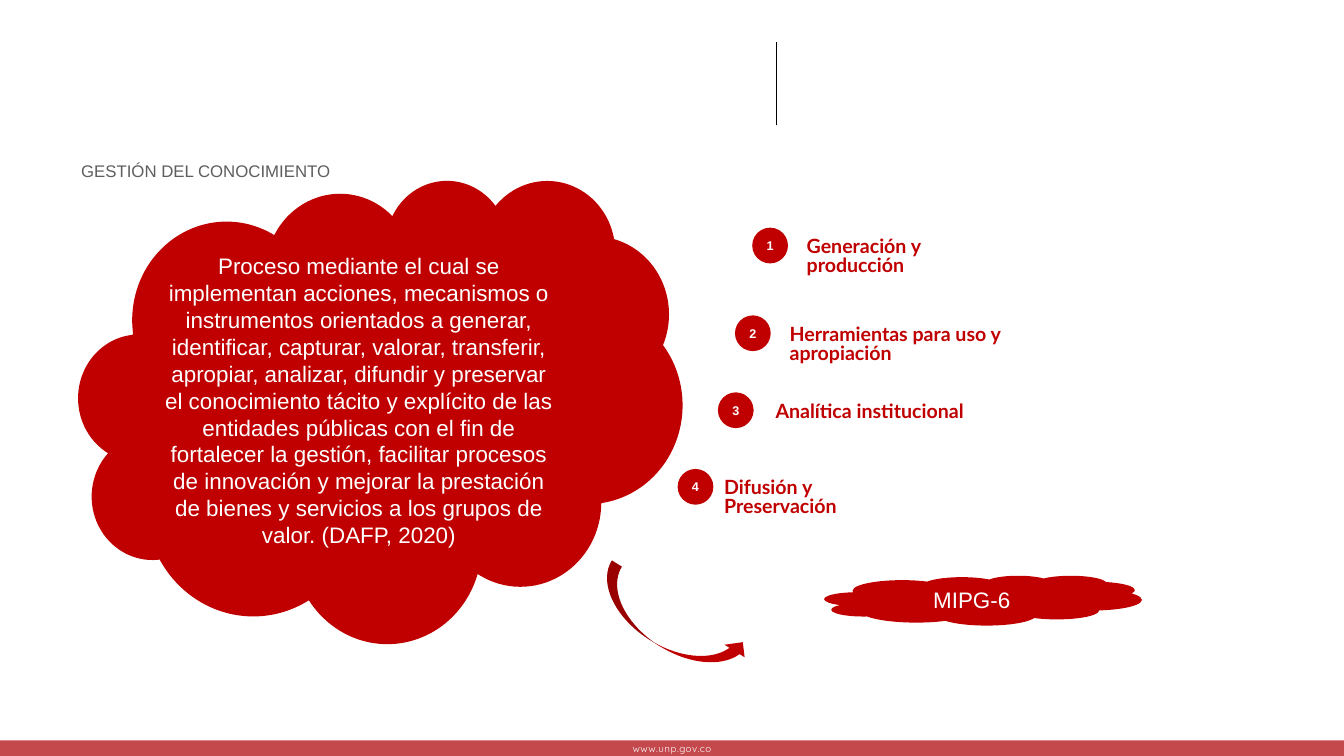
from pptx import Presentation
from pptx.dml.color import RGBColor
from pptx.enum.shapes import MSO_CONNECTOR, MSO_SHAPE
from pptx.enum.text import MSO_ANCHOR, PP_ALIGN
from pptx.oxml.ns import qn
from pptx.util import Cm, Pt
from lxml.etree import SubElement

COLORS = {
    "red": "C00000",
    "rose": "C4494D",
    "gray": "5E5E5E",
    "white": "FFFFFF",
    "black": "000000",
}
PAD = 0.15
CLOUD_TEXT = (
    "Proceso mediante el cual se implementan acciones, mecanismos o "
    "instrumentos orientados a generar, identificar, capturar, valorar, "
    "transferir, apropiar, analizar, difundir y preservar el conocimiento "
    "tácito y explícito de las entidades públicas con el fin de fortalecer "
    "la gestión, facilitar procesos de innovación y mejorar la prestación "
    "de bienes y servicios a los grupos de valor. (DAFP, 2020)"
)
STEPS = [
    ("Generación y producción", 37.95, 11.51, 40.41, 9.78),
    ("Herramientas para uso y apropiación", 37.08, 15.93, 39.55, 14.88),
    ("Analítica institucional", 36.22, 19.81, 38.84, 14.88),
    ("Difusión y Preservación", 34.19, 23.67, 36.25, 10.74),
]


def color(name):
    return RGBColor.from_string(COLORS[name])


def write(shape, text, size=32, font="Arial", ink="white", bold=False,
          align=PP_ALIGN.CENTER, anchor=MSO_ANCHOR.MIDDLE, pad=PAD,
          wrap=True, lead=None, track=None):
    frame = shape.text_frame
    frame.word_wrap = wrap
    frame.vertical_anchor = anchor
    if pad is not None:
        frame.margin_left = frame.margin_right = Cm(pad)
        frame.margin_top = frame.margin_bottom = Cm(pad)
    para = frame.paragraphs[0]
    para.alignment = align
    if lead:
        para.line_spacing = Pt(lead)
    run = para.add_run()
    run.text = text
    run.font.name = font
    run.font.size = Pt(size)
    run.font.bold = bold
    run.font.color.rgb = color(ink)
    if track:
        run.font._element.set("spc", str(track))


class Deck:
    def __init__(self, width, height):
        self.show = Presentation()
        self.show.slide_width = Cm(width)
        self.show.slide_height = Cm(height)
        self.slide = self.show.slides.add_slide(self.show.slide_layouts[5])

    def title(self, text, box, **style):
        shape = self.slide.shapes.title
        shape.left, shape.top, shape.width, shape.height = map(Cm, box)
        write(shape, text, **style)

    def shape(self, kind, box, fill="red", line=None, turn=0):
        shape = self.slide.shapes.add_shape(kind, *map(Cm, box))
        shape.shadow.inherit = False
        shape.fill.solid()
        shape.fill.fore_color.rgb = color(fill)
        if line:
            shape.line.color.rgb = color(line)
            shape.line.width = Pt(2)
        else:
            shape.line.fill.background()
        shape.rotation = turn
        return shape

    def text(self, text, box, **style):
        write(self.slide.shapes.add_textbox(*map(Cm, box)), text, **style)

    def line(self, *ends):
        line = self.slide.shapes.add_connector(
            MSO_CONNECTOR.STRAIGHT, *map(Cm, ends))
        line.line.color.rgb = color("black")
        line.line.width = Pt(2)
        SubElement(line._element.spPr, qn("a:effectLst"))

    def step(self, num, label, left, top, start, width):
        dot = self.shape(MSO_SHAPE.OVAL, (left, top, 1.73, 1.73), line="red")
        write(dot, str(num), size=18, bold=True, pad=None)
        self.text(label, (start, top + 0.39, width, 0.97), size=28,
                  font="Lato", ink="red", bold=True, align=PP_ALIGN.LEFT,
                  anchor=MSO_ANCHOR.TOP, pad=None, wrap=False, lead=27.1)


def main():
    deck = Deck(67.74, 38.1)
    deck.shape(MSO_SHAPE.RECTANGLE, (0, 37.31, 67.74, 0.84), fill="rose")
    deck.line(39.14, 6.32, 39.14, 2.11)
    deck.text("www.unp.gov.co", (31.7, 37.26, 4.34, 0.97), size=14,
              font="Quicksand", wrap=False, track=70)
    deck.title("GESTIÓN DEL CONOCIMIENTO", (3.94, 7.95, 30.4, 1.32),
               size=24, ink="gray", align=PP_ALIGN.LEFT)
    for num, step in enumerate(STEPS, 1):
        deck.step(num, *step)
    cloud = deck.shape(MSO_SHAPE.CLOUD, (3.96, 9.04, 30.43, 23.34))
    write(cloud, CLOUD_TEXT)
    deck.shape(MSO_SHAPE.CURVED_UP_ARROW, (29.57, 30.28, 8.38, 2.39), turn=32)
    goal = deck.shape(MSO_SHAPE.CLOUD, (41.55, 29.01, 16, 2.51))
    write(goal, "MIPG-6")
    deck.show.save("out.pptx")


if __name__ == "__main__":
    main()
